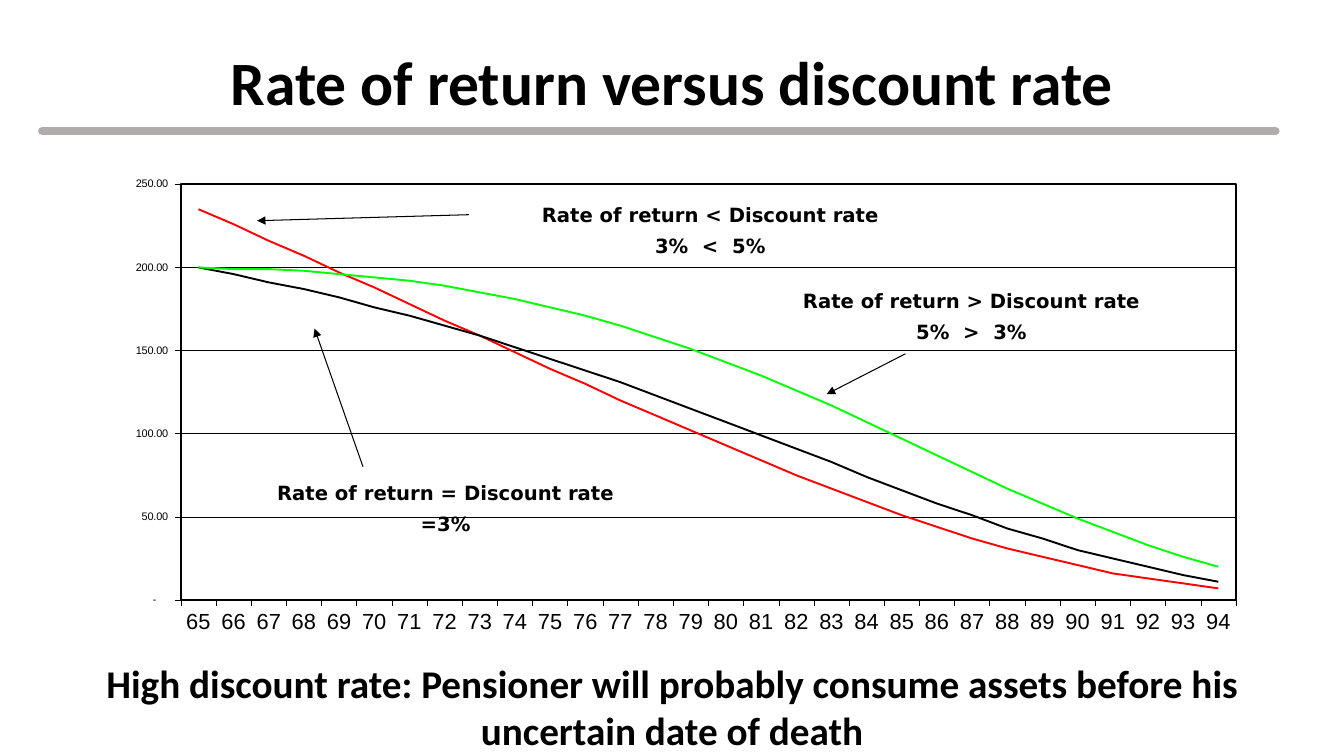
from lxml.etree import SubElement
from pptx import Presentation
from pptx.chart.data import CategoryChartData
from pptx.dml.color import RGBColor
from pptx.enum.chart import XL_CHART_TYPE, XL_TICK_MARK
from pptx.enum.shapes import MSO_CONNECTOR
from pptx.enum.text import MSO_ANCHOR, PP_ALIGN
from pptx.oxml import parse_xml
from pptx.oxml.ns import nsdecls, qn
from pptx.util import Inches, Pt

BLACK = RGBColor(0x00, 0x00, 0x00)
RED = RGBColor(0xFF, 0x00, 0x00)
GREEN = RGBColor(0x00, 0xFF, 0x00)
GREY = RGBColor(0xB0, 0xAC, 0xAB)
AMOUNT_FORMAT = '_(* #,##0.00_);_(* \\(#,##0.00\\);_(* "-"??_);_(@_)'

# Yearly consumption by age, one entry per relation of the two rates
AGES = [str(age) for age in range(65, 95)]
CONSUMPTION = [
    ("Series 1", RED, [235, 226, 216, 207, 197, 188, 178, 168, 159, 149,
                       139, 130, 120, 111, 102, 93, 84, 75, 67, 59,
                       51, 44, 37, 31, 26, 21, 16, 13, 10, 7]),
    ("Series 2", BLACK, [200, 196, 191, 187, 182, 176, 171, 165, 159, 152,
                         145, 138, 131, 123, 115, 107, 99, 91, 83, 74,
                         66, 58, 51, 43, 37, 30, 25, 20, 15, 11]),
    ("Series 3", GREEN, [200, 199, 199, 198, 196, 194, 192, 189, 185, 181,
                         176, 171, 165, 158, 151, 143, 135, 126, 117, 107,
                         97, 87, 77, 67, 58, 49, 41, 33, 26, 20]),
]

# Curve labels: box, lines of text, arrow start, arrow end
CURVE_LABELS = [
    ((7.34, 2.84, 4.59, 0.64), ["Rate of return > Discount rate", "5%  >  3%"],
     (8.98, 3.51), (8.2, 3.91)),
    ((1.5, 4.75, 5.84, 0.64), ["Rate of return = Discount rate", "=3%"],
     (3.6, 4.63), (3.12, 3.26)),
    ((4.89, 1.99, 4.31, 0.64), ["Rate of return < Discount rate", "3%  <  5%"],
     (4.65, 2.13), (2.55, 2.19)),
]


class SlideBuilder:
    """Holds the style and the current slide."""

    heading_font = "Calibri"
    label_font = "DejaVu Sans"
    chart_font = "Arial"
    thin, curve_width = Pt(0.34), Pt(1.36)

    def __init__(self, presentation):
        self.slide = presentation.slides.add_slide(presentation.slide_layouts[5])

    def style_font(self, font, name, size, bold=False):
        font.name, font.size, font.bold = name, Pt(size), bold
        font.color.rgb = BLACK

    def style_line(self, line, color, width):
        line.color.rgb = color
        line.width = width

    def fill_text(self, frame, lines, font, size, line_spacing=None, gap=0):
        frame.word_wrap = True
        frame.text = "\n".join(lines)
        for index, paragraph in enumerate(frame.paragraphs):
            paragraph.alignment = PP_ALIGN.CENTER
            paragraph.line_spacing = line_spacing
            paragraph.space_before = Pt(gap if index else 0)
            self.style_font(paragraph.font, font, size, True)

    def title(self, text, box):
        heading = self.slide.shapes.title
        heading.left, heading.top, heading.width, heading.height = map(Inches, box)
        heading.text_frame.vertical_anchor = MSO_ANCHOR.MIDDLE
        self.fill_text(heading.text_frame, [text], self.heading_font, 44, 0.9)

    def text(self, lines, box, font, size, line_spacing=None, gap=0):
        frame = self.slide.shapes.add_textbox(*map(Inches, box)).text_frame
        self.fill_text(frame, lines, font, size, line_spacing, gap)

    def line(self, start, end, color, width, arrow=False, cap="flat"):
        connector = self.slide.shapes.add_connector(
            MSO_CONNECTOR.STRAIGHT, *map(Inches, start + end))
        self.style_line(connector.line, color, Pt(width))
        properties = connector._element.spPr
        outline = properties.find(qn("a:ln"))
        outline.set("cap", cap)
        if arrow:
            SubElement(outline, qn("a:tailEnd"), type="triangle")
        SubElement(properties, qn("a:effectLst"))

    def line_chart(self, box, plot_box):
        data = CategoryChartData(number_format=AMOUNT_FORMAT)
        data.categories = AGES
        for name, _, amounts in CONSUMPTION:
            data.add_series(name, amounts)
        chart = self.slide.shapes.add_chart(
            XL_CHART_TYPE.LINE, *map(Inches, box), data).chart
        chart.has_legend = chart.has_title = False
        self.style_font(chart.font, self.chart_font, 5.4)
        chart.plots[0].vary_by_categories = False
        for series, (_, color, _) in zip(chart.plots[0].series, CONSUMPTION):
            series.smooth = False
            self.style_line(series.format.line, color, self.curve_width)

        # Axes and gridlines
        for axis, size in ((chart.category_axis, 15.6), (chart.value_axis, 7.8)):
            self.style_font(axis.tick_labels.font, self.chart_font, size)
            self.style_line(axis.format.line, BLACK, self.thin)
            axis.major_tick_mark = XL_TICK_MARK.OUTSIDE
            axis.minor_tick_mark = XL_TICK_MARK.NONE
        amounts = chart.value_axis
        amounts.minimum_scale, amounts.maximum_scale, amounts.major_unit = 0, 250, 50
        amounts.tick_labels.number_format = AMOUNT_FORMAT
        amounts.tick_labels.number_format_is_linked = False
        amounts.has_major_gridlines = True
        self.style_line(amounts.major_gridlines.format.line, BLACK, self.thin)
        self.frame_plot(chart, plot_box)

    def frame_plot(self, chart, plot_box):
        plot_area = chart._chartSpace.chart.plotArea
        for layout in plot_area.findall(qn("c:layout")):
            plot_area.remove(layout)
        layout = parse_xml(f"<c:layout {nsdecls('c')}/>")
        manual = SubElement(layout, qn("c:manualLayout"))
        settings = [("layoutTarget", "inner"), ("xMode", "edge"), ("yMode", "edge")]
        settings += zip("xywh", plot_box)
        for name, value in settings:
            SubElement(manual, qn(f"c:{name}"), val=str(value))
        plot_area.insert(0, layout)
        plot_area.append(parse_xml(
            f"<c:spPr {nsdecls('c', 'a')}><a:noFill/>"
            f'<a:ln w="{self.curve_width}"><a:solidFill><a:srgbClr val="{BLACK}"/>'
            "</a:solidFill></a:ln></c:spPr>"))


def main():
    presentation = Presentation()
    presentation.slide_width, presentation.slide_height = Inches(13.33), Inches(7.5)
    builder = SlideBuilder(presentation)

    # Title and chart
    builder.title("Rate of return versus discount rate", (0.92, 0.28, 11.5, 1.13))
    builder.line_chart((0.92, 1.53, 11.5, 5.15), (0.076, 0.058, 0.91, 0.801))

    # Curve labels with their arrows
    for box, lines, start, end in CURVE_LABELS:
        builder.text(lines, box, builder.label_font, 14, 0.9, 7)
        builder.line(start, end, BLACK, 0.75, arrow=True)

    # Conclusion and title rule
    builder.text(["High discount rate: Pensioner will probably consume assets "
                  "before his uncertain date of death"],
                 (0.56, 6.49, 12.21, 1.04), builder.heading_font, 28)
    builder.line((0.42, 1.3), (12.65, 1.3), GREY, 6, cap="rnd")
    presentation.save("out.pptx")


if __name__ == "__main__":
    main()
